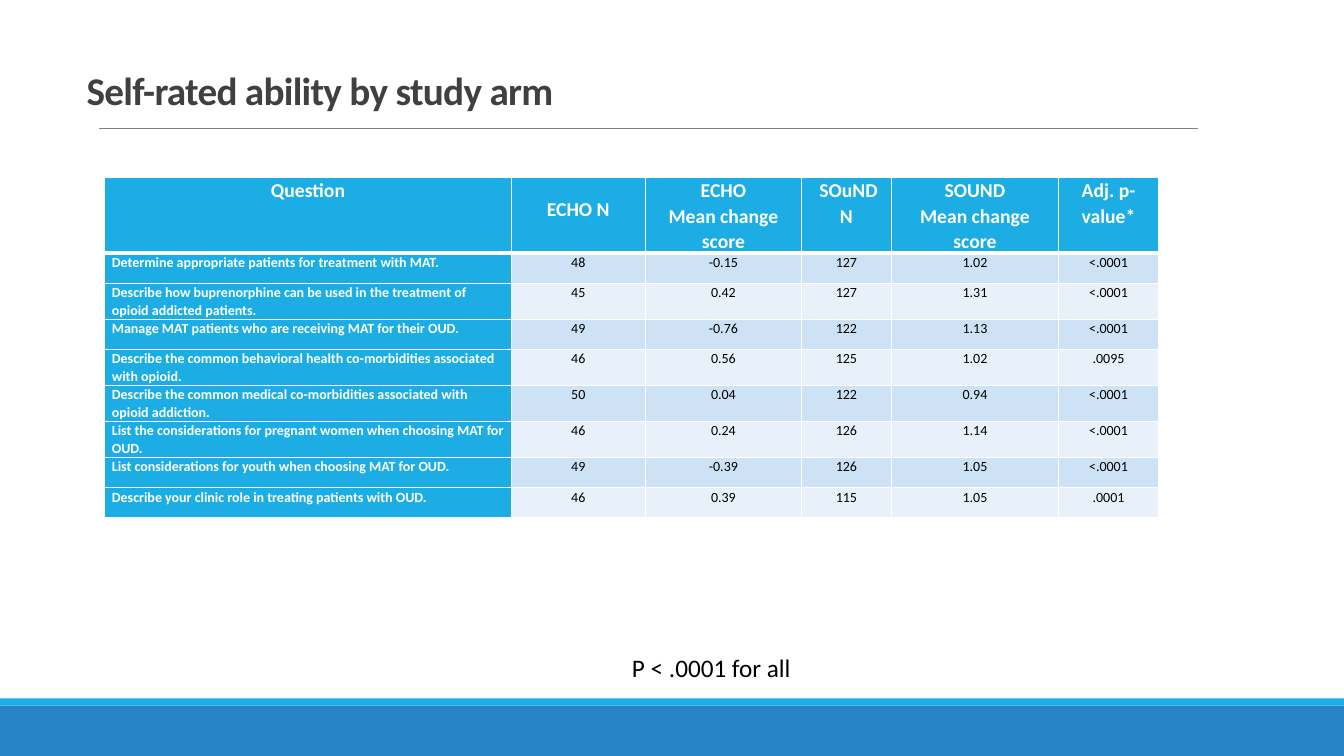
from lxml import etree
from pptx import Presentation
from pptx.dml.color import RGBColor
from pptx.enum.shapes import MSO_CONNECTOR as CONN, MSO_SHAPE as SHAPE
from pptx.enum.text import MSO_ANCHOR as ANCHOR, MSO_AUTO_SIZE as AUTO, PP_ALIGN as ALIGN
from pptx.oxml.ns import qn
from pptx.util import Inches, Pt

HEADERS = [["Question"], ["ECHO N"], ["ECHO", "Mean change score"], [" SOuND N"],
           ["SOUND", "Mean change score"], ["Adj. p-value*"]]
ROWS = [
    ("Determine appropriate patients for treatment with MAT.",
     "48", "-0.15", "127", "1.02", "<.0001"),
    ("Describe how buprenorphine can be used in the treatment of opioid addicted patients.",
     "45", "0.42", "127", "1.31", "<.0001"),
    ("Manage MAT patients who are receiving MAT for their OUD.",
     "49", "-0.76", "122", "1.13", "<.0001"),
    ("Describe the common behavioral health co-morbidities associated with opioid.",
     "46", "0.56", "125", "1.02", ".0095"),
    ("Describe the common medical co-morbidities associated with opioid addiction.",
     "50", "0.04", "122", "0.94", "<.0001"),
    ("List the considerations for pregnant women when choosing MAT for OUD.",
     "46", "0.24", "126", "1.14", "<.0001"),
    ("List considerations for youth when choosing MAT for OUD.",
     "49", "-0.39", "126", "1.05", "<.0001"),
    ("Describe your clinic role in treating patients with OUD.",
     "46", "0.39", "115", "1.05", ".0001"),
]
COL_WIDTHS = [4.03, 1.33, 1.55, 0.89, 1.66, 0.99]
HEADER_HEIGHT, ROW_HEIGHT = 0.74, 0.3


def rgb(value):
    return RGBColor.from_string(value)


class Deck:
    FONT = "Calibri"
    ACCENT, BLUE, GREY, DARK = "1CADE4", "2683C6", "808080", "404040"
    WHITE, BLACK = "FFFFFF", "000000"
    BANDS = ["CDE3F5", "E8F1FA"]

    def __init__(self):
        self.prs = Presentation()
        self.prs.slide_width, self.prs.slide_height = Inches(13.33), Inches(7.5)
        self.s = self.prs.slides.add_slide(self.prs.slide_layouts[5])

    def run(self, p, text, size, color, bold=False):
        r = p.add_run()
        r.text = text
        r.font.name, r.font.size, r.font.bold = self.FONT, Pt(size), bold
        r.font.color.rgb = rgb(color)
        return r

    def band(self, top, height, color):
        sp = self.s.shapes.add_shape(SHAPE.RECTANGLE, 0, Inches(top),
                                     self.prs.slide_width, Inches(height))
        sp.shadow.inherit = False
        sp.fill.solid()
        sp.fill.fore_color.rgb = rgb(color)
        sp.line.fill.background()

    def rule(self, x1, x2, y):
        line = self.s.shapes.add_connector(CONN.STRAIGHT, Inches(x1), Inches(y),
                                           Inches(x2), Inches(y))
        line.line.color.rgb = rgb(self.GREY)
        line.line.width = Pt(0.5)
        etree.SubElement(line._element.spPr, qn("a:effectLst"))

    def title(self, text, left, top, width, height):
        sp = self.s.shapes.title
        sp.left, sp.top, sp.width, sp.height = map(Inches, (left, top, width, height))
        tf = sp.text_frame
        tf.auto_size, tf.vertical_anchor = AUTO.NONE, ANCHOR.BOTTOM
        p = tf.paragraphs[0]
        p.alignment, p.line_spacing = ALIGN.LEFT, 0.85
        r = self.run(p, text, 28, self.DARK, bold=True)
        r.font._element.set("spc", "-50")

    def text(self, text, left, top, width, height):
        sp = self.s.shapes.add_textbox(*map(Inches, (left, top, width, height)))
        tf = sp.text_frame
        tf.word_wrap, tf.auto_size = True, AUTO.SHAPE_TO_FIT_TEXT
        self.run(tf.paragraphs[0], text, 18, self.BLACK)

    def borders(self, cell, bottom):
        """Draw white cell edges; the bottom edge has its own width in points."""
        tcPr = cell._tc.get_or_add_tcPr()
        for i, (side, width) in enumerate(zip("LRTB", (1, 1, 1, bottom))):
            ln = etree.Element(qn(f"a:ln{side}"), w=str(Pt(width)))
            fill = etree.SubElement(ln, qn("a:solidFill"))
            etree.SubElement(fill, qn("a:srgbClr"), val=self.WHITE)
            tcPr.insert(i, ln)

    def cell(self, cell, lines, size, color, fill, bold, align, bottom=1):
        cell.margin_left = cell.margin_right = Inches(0.07)
        cell.margin_top = cell.margin_bottom = 0
        cell.fill.solid()
        cell.fill.fore_color.rgb = rgb(fill)
        self.borders(cell, bottom)
        tf = cell.text_frame
        for i, line in enumerate(lines):
            p = tf.add_paragraph() if i else tf.paragraphs[0]
            p.alignment, p.line_spacing = align, 1.07
            self.run(p, line, size, color, bold)

    def table(self, left, top):
        height = HEADER_HEIGHT + ROW_HEIGHT * len(ROWS)
        tbl = self.s.shapes.add_table(len(ROWS) + 1, len(HEADERS), Inches(left), Inches(top),
                                      Inches(sum(COL_WIDTHS)), Inches(height)).table
        for col, width in zip(tbl.columns, COL_WIDTHS):
            col.width = Inches(width)
        for i, row in enumerate(tbl.rows):
            row.height = Inches(ROW_HEIGHT if i else HEADER_HEIGHT)
        for c, lines in enumerate(HEADERS):
            self.cell(tbl.cell(0, c), lines, 14, self.WHITE, self.ACCENT, True,
                      ALIGN.CENTER, bottom=3)
        tbl.cell(0, 1).margin_top = Inches(0.19)
        for i, (question, *values) in enumerate(ROWS):
            self.cell(tbl.cell(i + 1, 0), [question], 10, self.WHITE, self.ACCENT, True,
                      ALIGN.LEFT)
            for c, value in enumerate(values, 1):
                self.cell(tbl.cell(i + 1, c), [value], 10, self.BLACK, self.BANDS[i % 2],
                          False, ALIGN.CENTER)


def main():
    deck = Deck()
    deck.band(7, 0.5, deck.BLUE)
    deck.band(6.93, 0.07, deck.ACCENT)
    deck.rule(0.98, 11.88, 1.27)
    deck.title("Self-rated ability by study arm", 0.76, 0.34, 11, 0.84)
    deck.text("P < .0001 for all", 6.17, 6.42, 5.03, 0.4)
    deck.table(1.04, 1.76)
    deck.prs.save("out.pptx")


if __name__ == "__main__":
    main()
